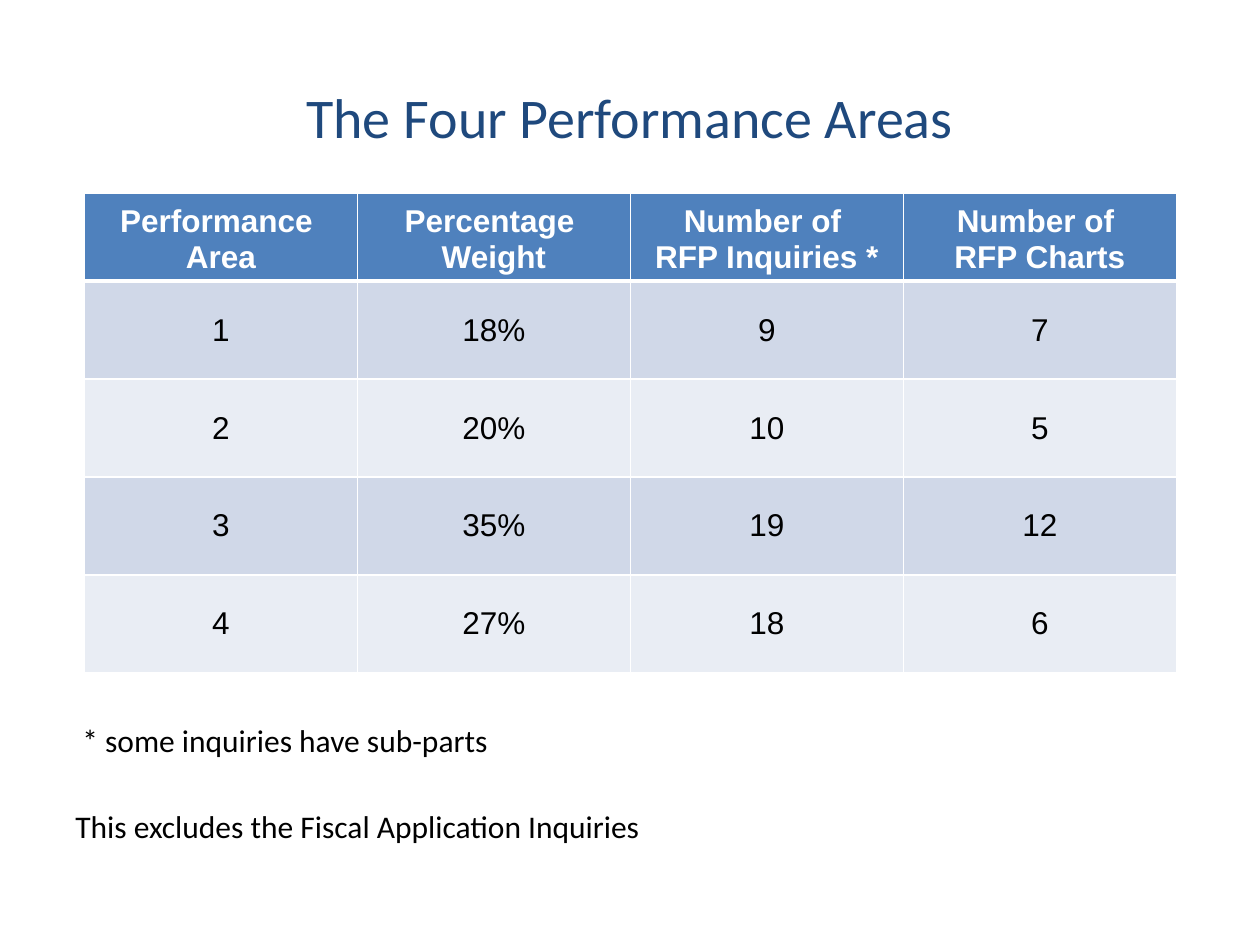
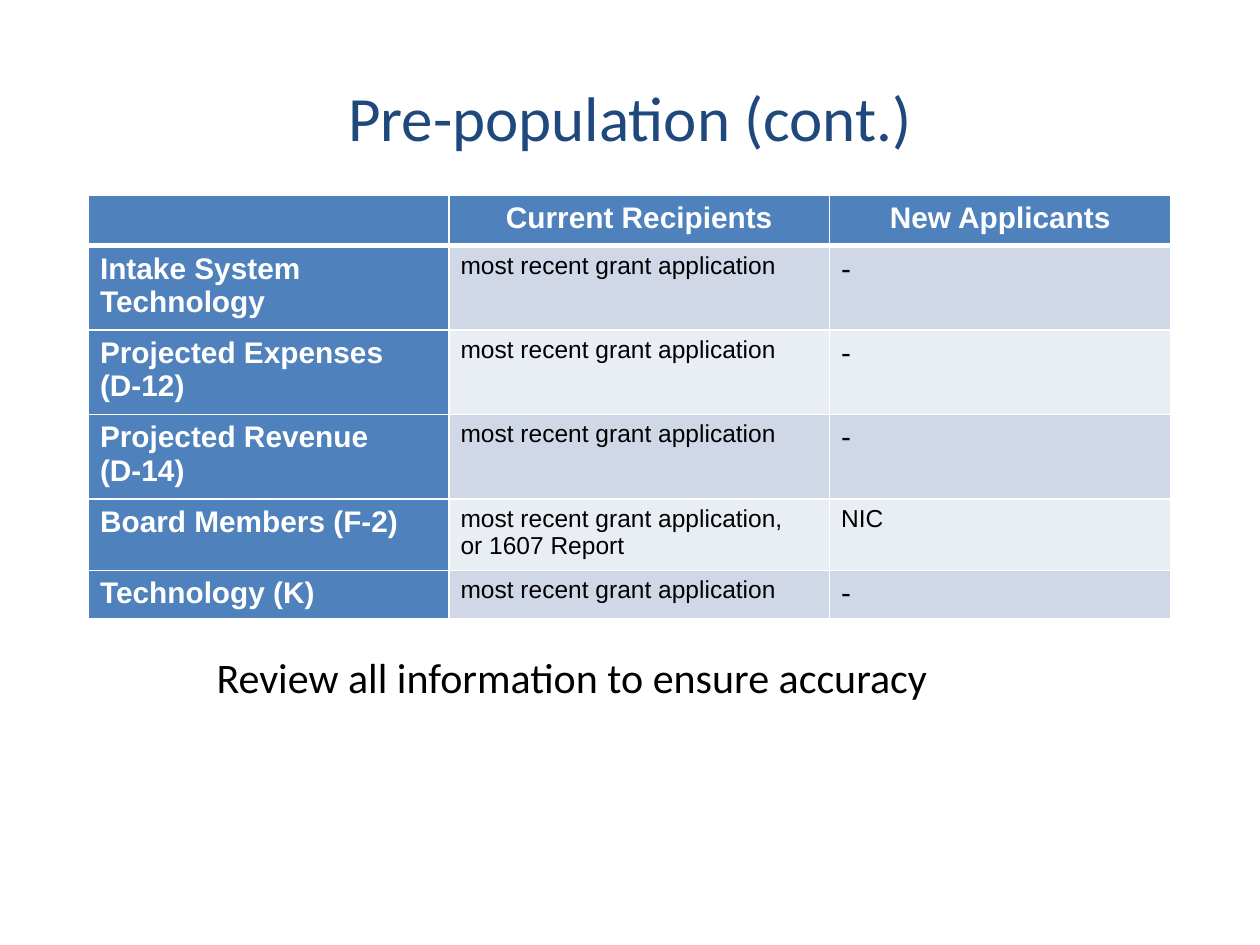
import pptx
import pptx.dml.color
import pptx.enum.text
import pptx.oxml
import pptx.util
import lxml.etree

Pt = pptx.util.Pt
ALIGN = pptx.enum.text.PP_ALIGN
ANCHOR = pptx.enum.text.MSO_ANCHOR

COLORS = {
    "title": "1F497D",
    "header": "4F81BD",
    "odd": "D0D8E8",
    "even": "E9EDF4",
    "white": "FFFFFF",
    "black": "000000",
}
TITLE_BOX = (36, 21.6, 648, 90)


def rgb(name):
    """Return the named colour of the deck."""
    return pptx.dml.color.RGBColor.from_string(COLORS[name])


def add_span(para, text, size, color, font, bold=False):
    """Add one formatted run to a paragraph."""
    span = para.add_run()
    span.text = text
    span.font.size = Pt(size)
    span.font.name = font
    span.font.bold = bold
    span.font.color.rgb = rgb(color)


def fill_frame(frame, text, size, color, font, align=ALIGN.LEFT, bold=False, gap=0):
    """Write each line of text as a paragraph, with a gap between paragraphs."""
    for index, line in enumerate(text.split("\n")):
        para = frame.add_paragraph() if index else frame.paragraphs[0]
        para.alignment = align
        if index and gap:
            para.space_before = Pt(gap)
        add_span(para, line, size, color, font, bold)


def add_text(page, box, text, size, color="black", align=ALIGN.LEFT, anchor=ANCHOR.TOP, gap=0):
    """Add a wrapped Calibri text box and return its frame."""
    frame = page.shapes.add_textbox(*map(Pt, box)).text_frame
    frame.word_wrap = True
    frame.vertical_anchor = anchor
    fill_frame(frame, text, size, color, "Calibri", align, gap=gap)
    return frame


def add_title(page, text, size):
    """Add the centred slide title."""
    add_text(page, TITLE_BOX, text, size, "title", ALIGN.CENTER, ANCHOR.MIDDLE)


def set_borders(cell, row_index):
    """Draw white cell borders, thick below the header row."""
    properties = cell._tc.get_or_add_tcPr()
    thick_side = {0: "lnB", 1: "lnT"}.get(row_index)
    for side in ("lnL", "lnR", "lnT", "lnB"):
        width = Pt(3 if side == thick_side else 1)
        line = lxml.etree.SubElement(properties, pptx.oxml.ns.qn("a:" + side), w=str(int(width)))
        paint = lxml.etree.SubElement(line, pptx.oxml.ns.qn("a:solidFill"))
        lxml.etree.SubElement(paint, pptx.oxml.ns.qn("a:srgbClr"), val=COLORS["white"])


def add_grid(page, left, top, widths, heights, rows, style_cell, side_margin):
    """Add a banded table whose text style comes from style_cell."""
    shape = page.shapes.add_table(
        len(rows), len(widths), Pt(left), Pt(top), Pt(sum(widths)), Pt(sum(heights)))
    table = shape.table
    for column, width in zip(table.columns, widths):
        column.width = Pt(width)
    for row_index, texts in enumerate(rows):
        table.rows[row_index].height = Pt(heights[row_index])
        for column_index, text in enumerate(texts):
            cell = table.cell(row_index, column_index)
            style = style_cell(row_index, column_index, text)
            is_header = style["header"]
            set_borders(cell, row_index)
            cell.fill.solid()
            band = "odd" if row_index % 2 else "even"
            cell.fill.fore_color.rgb = rgb("header" if is_header else band)
            cell.margin_left = cell.margin_right = Pt(side_margin)
            cell.margin_top = cell.margin_bottom = Pt(3.6)
            cell.vertical_anchor = style["anchor"]
            fill_frame(cell.text_frame, text, style["size"], "white" if is_header else "black",
                       "Arial", style["align"], is_header)


def style_area_cell(row_index, column_index, text):
    """Centre every cell, with the header at the bottom of its row."""
    is_header = row_index == 0
    return {"header": is_header, "size": 18, "align": ALIGN.CENTER,
            "anchor": ANCHOR.BOTTOM if is_header else ANCHOR.MIDDLE}


def style_source_cell(row_index, column_index, text):
    """Head the first row and column, and set body wording smaller."""
    is_header = row_index == 0 or column_index == 0
    return {"header": is_header, "size": 17 if is_header or text == "-" else 14,
            "align": ALIGN.LEFT if row_index else ALIGN.CENTER, "anchor": ANCHOR.TOP}


def build_performance_areas(page):
    """Build the slide of weights and counts by performance area."""
    add_title(page, "The Four Performance Areas", 32)
    notes = add_text(
        page, (36, 408.24, 648, 36),
        "* some inquiries have sub-parts\nThis excludes the Fiscal Application Inquiries",
        18, gap=28)
    notes.paragraphs[0]._p.get_or_add_pPr().set("marL", str(int(Pt(4))))
    rows = [
        ("Performance \nArea", "Percentage \nWeight",
         "Number of \nRFP Inquiries *", "Number of \nRFP Charts"),
        ("1", "18%", "9", "7"),
        ("2", "20%", "10", "5"),
        ("3", "35%", "19", "12"),
        ("4", "27%", "18", "6"),
    ]
    add_grid(page, 48.24, 110.2, [156] * 4, [50] + [56] * 4, rows, style_area_cell, 7.2)


def build_prepopulation(page):
    """Build the slide of sources for pre-populated information."""
    add_title(page, "Pre-population (cont.)", 36)
    add_text(page, (116.64, 369, 486, 32), "Review all information to ensure accuracy", 24)
    recent = "most recent grant application"
    rows = [
        ("", "Current Recipients", "New Applicants"),
        ("Intake System Technology", recent, "-"),
        ("Projected Expenses\n(D-12)", recent, "-"),
        ("Projected Revenue\n(D-14)", recent, "-"),
        ("Board Members (F-2)", recent + ",\nor 1607 Report", "NIC"),
        ("Technology (K)", recent, "-"),
    ]
    add_grid(page, 50.6, 111.6, [206, 217.5, 195], [27.5, 46.8, 48.3, 48.3, 39.6, 27.5],
             rows, style_source_cell, 6.6)


def main():
    """Build and save the deck."""
    deck = pptx.Presentation()
    deck.slide_width, deck.slide_height = Pt(720), Pt(540)
    for build in (build_performance_areas, build_prepopulation):
        build(deck.slides.add_slide(deck.slide_layouts[6]))
    deck.save("out.pptx")


if __name__ == "__main__":
    main()
